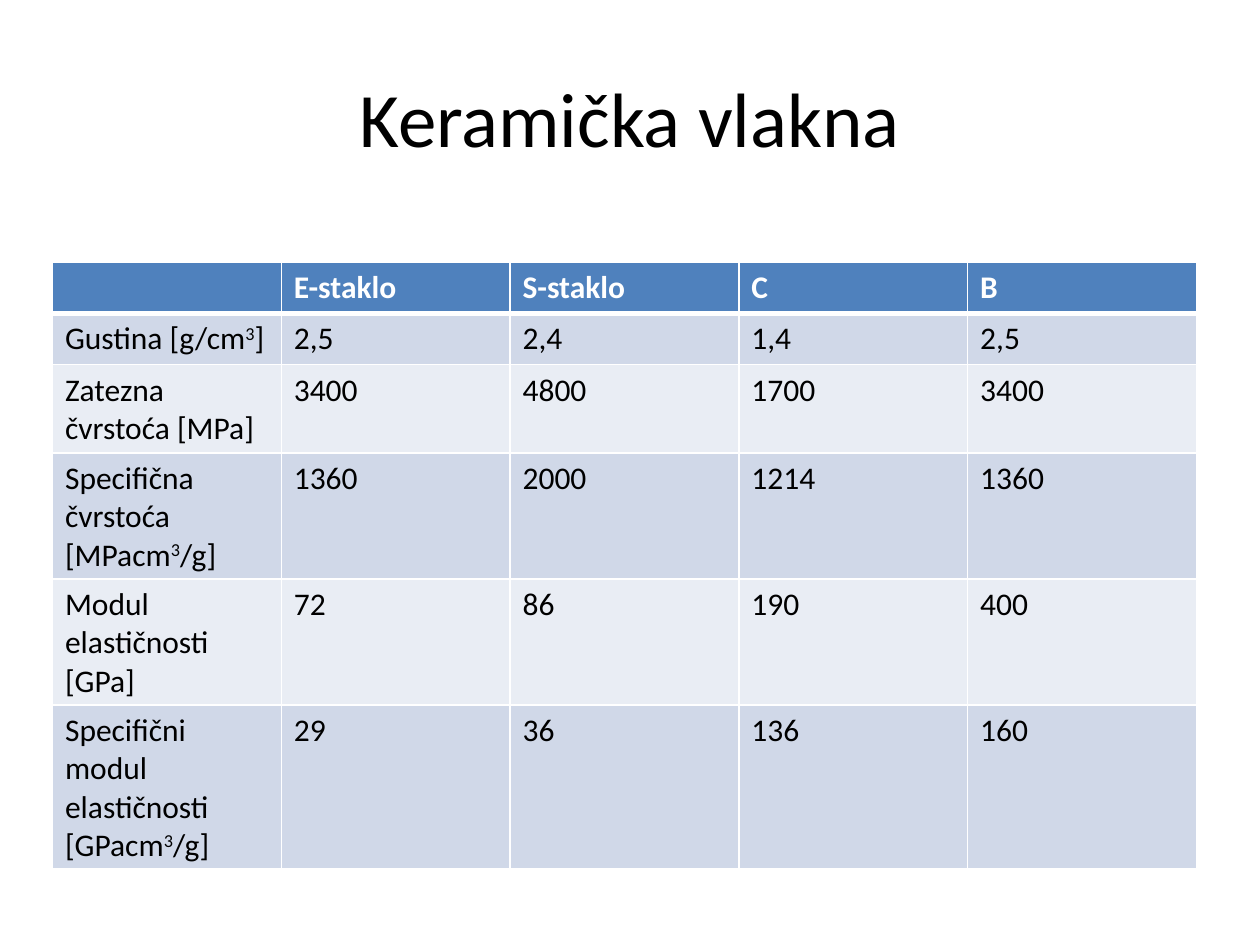
"""Build a slide with a table comparing the properties of ceramic fibres."""
from dataclasses import dataclass

from pptx import Presentation
from pptx import util as u
from pptx.dml.color import RGBColor
from pptx.enum import text
from pptx.oxml import parse_xml
from pptx.oxml.ns import nsdecls


@dataclass(frozen=True)
class Theme:
    font: str = "Calibri"
    title_size: float = 44
    body_size: float = 18
    ink: str = "000000"
    paper: str = "FFFFFF"
    header: str = "4F81BD"
    bands: tuple[str, str] = ("D0D8E8", "E9EDF4")
    rule: float = 1
    header_rule: float = 3


@dataclass(frozen=True)
class Property:
    label: str
    values: tuple[str, ...]


THEME = Theme()
FIBRES = ("E-staklo", "S-staklo", "C", "B")
PROPERTIES = (
    Property("Gustina [g/cm^3^]", ("2,5", "2,4", "1,4", "2,5")),
    Property("Zatezna čvrstoća [MPa]", ("3400", "4800", "1700", "3400")),
    Property("Specifična čvrstoća [MPacm^3^/g]", ("1360", "2000", "1214", "1360")),
    Property("Modul elastičnosti [GPa]", ("72", "86", "190", "400")),
    Property("Specifični modul elastičnosti [GPacm^3^/g]", ("29", "36", "136", "160")),
)
COLUMN_WIDTH = u.Pt(130.75)
ROW_HEIGHT = u.Pt(29.2)


def add_runs(paragraph, wording: str, size: float, color: str, bold: bool = False) -> None:
    """Add the wording run by run, raising the parts between carets."""
    for index, part in enumerate(wording.split("^")):
        run = paragraph.add_run()
        run.text = part
        run.font.name = THEME.font
        run.font.size = u.Pt(size)
        run.font.bold = bold
        run.font.color.rgb = RGBColor.from_string(color)
        if index % 2:
            run._r.get_or_add_rPr().set("baseline", "30000")


def add_borders(cell, top: float, bottom: float) -> None:
    """Rule all four sides of a cell."""
    properties = cell._tc.get_or_add_tcPr()
    for side, width in (("L", THEME.rule), ("R", THEME.rule), ("T", top), ("B", bottom)):
        properties.append(parse_xml(
            f'<a:ln{side} {nsdecls("a")} w="{u.Pt(width)}"><a:solidFill>'
            f'<a:srgbClr val="{THEME.paper}"/></a:solidFill></a:ln{side}>'
        ))


def fill_cell(cell, wording: str, row: int) -> None:
    """Style a cell for its row and write its wording."""
    is_header = row == 0
    add_borders(
        cell,
        top=THEME.header_rule if row == 1 else THEME.rule,
        bottom=THEME.header_rule if is_header else THEME.rule,
    )
    cell.fill.solid()
    band = THEME.header if is_header else THEME.bands[(row - 1) % 2]
    cell.fill.fore_color.rgb = RGBColor.from_string(band)
    paragraph = cell.text_frame.paragraphs[0]
    if wording:
        ink = THEME.paper if is_header else THEME.ink
        add_runs(paragraph, wording, THEME.body_size, ink, bold=is_header)


def add_title(slide, wording: str) -> None:
    """Add the centred slide title."""
    frame = slide.shapes.add_textbox(u.Pt(36), u.Pt(21.6), u.Pt(648), u.Pt(90)).text_frame
    frame.word_wrap = True
    frame.vertical_anchor = text.MSO_ANCHOR.MIDDLE
    heading = frame.paragraphs[0]
    heading.alignment = text.PP_ALIGN.CENTER
    add_runs(heading, wording, THEME.title_size, THEME.ink)


def add_property_table(slide) -> None:
    """Add the table of fibres against properties."""
    grid = [("", *FIBRES), *((item.label, *item.values) for item in PROPERTIES)]
    rows, columns = len(grid), len(grid[0])
    table = slide.shapes.add_table(
        rows, columns, u.Pt(30), u.Pt(150), COLUMN_WIDTH * columns, ROW_HEIGHT * rows
    ).table
    for row, wordings in enumerate(grid):
        for column, wording in enumerate(wordings):
            fill_cell(table.cell(row, column), wording, row)


def main() -> None:
    """Build and save the presentation."""
    deck = Presentation()
    deck.slide_width, deck.slide_height = u.Pt(720), u.Pt(540)
    slide = deck.slides.add_slide(deck.slide_layouts[6])
    add_title(slide, "Keramička vlakna")
    add_property_table(slide)
    deck.save("out.pptx")


if __name__ == "__main__":
    main()
